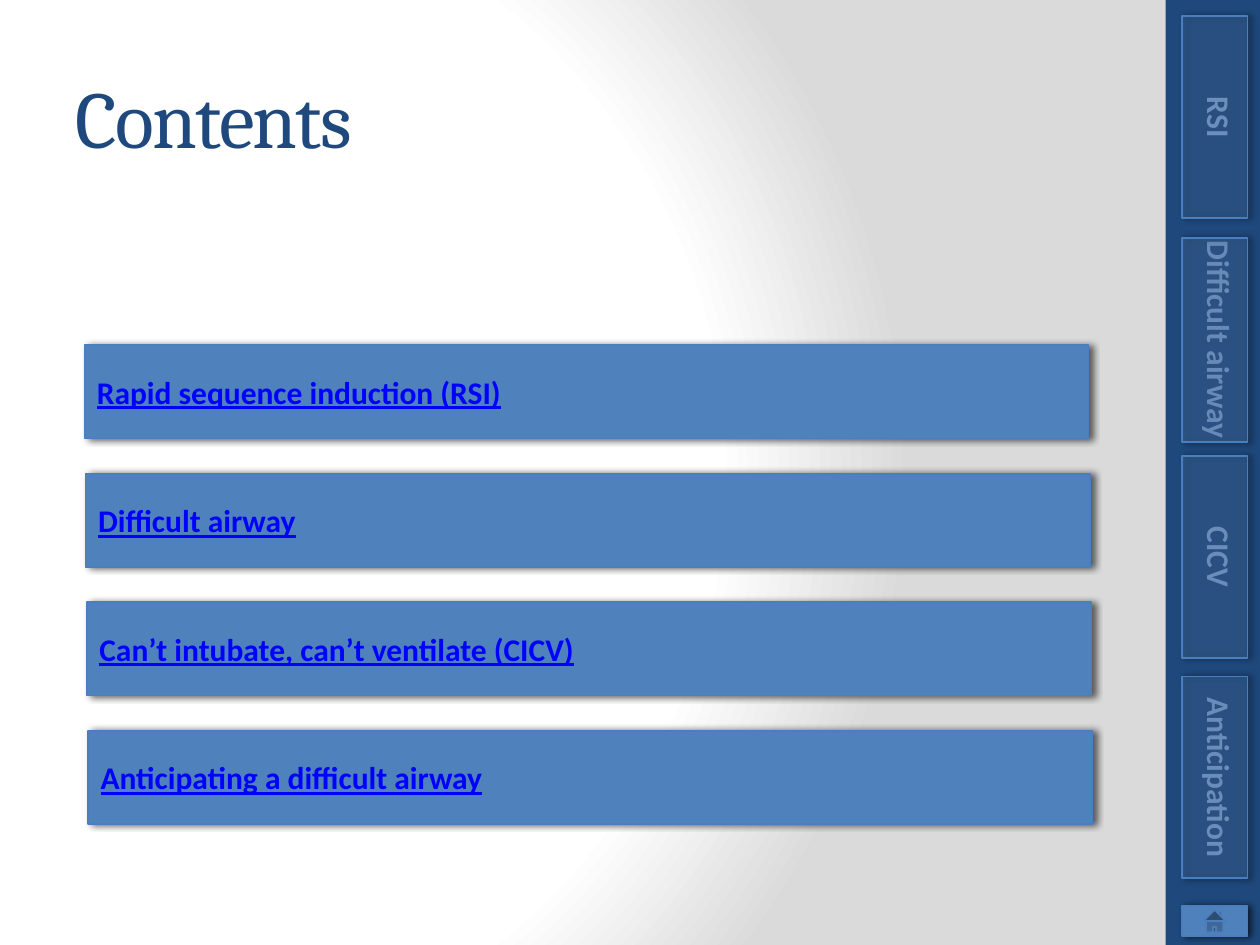
from pptx import Presentation
from pptx.dml.color import RGBColor
from pptx.enum.shapes import MSO_SHAPE
from pptx.enum.text import MSO_ANCHOR, PP_ALIGN
from pptx.oxml import parse_xml
from pptx.oxml.ns import nsdecls, qn
from pptx.util import Inches, Pt

RECTANGLE = MSO_SHAPE.RECTANGLE
BLANK_BUTTON = MSO_SHAPE.ACTION_BUTTON_CUSTOM
HOME_BUTTON = MSO_SHAPE.ACTION_BUTTON_HOME
MIDDLE = MSO_ANCHOR.MIDDLE
TOP = MSO_ANCHOR.TOP
LEFT = PP_ALIGN.LEFT
CENTER = PP_ALIGN.CENTER

NAVY = "1F497D"
BLUE = "4F81BD"
BORDER = "4B7EBC"
LINK = "0000FF"
PALE = "8EB4E3"

ENTRIES = [
    ("Rapid sequence induction (RSI)", 3.51),
    ("Difficult airway", 1.84),
    ("Can’t intubate, can’t ventilate (CICV)", 4.07),
    ("Anticipating a difficult airway", 3.3),
]

TABS = [
    ("Difficult airway", 1.79, 1.81, 1.89, 1.62, 33),
    ("RSI", 0.13, 1.6, 0.13, 1.6, 28),
    ("Anticipation", 5.37, 1.6, 5.37, 1.6, 30),
    ("CICV", 3.6, 1.64, 3.62, 1.6, 30),
]

GRADIENT = f"""<a:gradFill rotWithShape="1" {nsdecls("a")}><a:gsLst>
<a:gs pos="0"><a:srgbClr val="FFFFFF"/></a:gs>
<a:gs pos="75000"><a:srgbClr val="FFFFFF"/></a:gs>
<a:gs pos="100000"><a:srgbClr val="DADADA"/></a:gs></a:gsLst>
<a:path path="circle"><a:fillToRect l="20000" t="50000" r="100000" b="50000"/></a:path>
</a:gradFill>"""

SHADOW = f"""<a:effectLst {nsdecls("a")}>
<a:outerShdw blurRad="{Pt(4)}" dist="{Pt(2)}" dir="0" rotWithShape="0">
<a:srgbClr val="000000"><a:alpha val="60000"/></a:srgbClr></a:outerShdw></a:effectLst>"""


def color(value):
    return RGBColor.from_string(value)


class ContentsSlide:
    """Holds the style and the current slide, and draws each kind of element."""

    heading_font = "Cambria"
    body_font = "Calibri"
    body_size = 18

    def __init__(self, presentation):
        self.slide = presentation.slides.add_slide(presentation.slide_layouts[6])

    def background(self):
        self.slide.background.fill.solid()
        properties = self.slide.element.find(".//" + qn("p:bgPr"))
        properties.replace(properties[0], parse_xml(GRADIENT))

    def panel(self, shapes, kind, left, top, width, height, fill):
        shape = shapes.add_shape(kind, Inches(left), Inches(top), Inches(width), Inches(height))
        shape.shadow.inherit = False
        shape.fill.solid()
        shape.fill.fore_color.rgb = color(fill)
        shape.line.fill.background()
        return shape

    def button(self, shapes, kind, left, top, width, height, opacity=100):
        shape = self.panel(shapes, kind, left, top, width, height, BLUE)
        shape.line.color.rgb = color(BORDER)
        shape.line.width = Pt(1)
        properties = shape.element.spPr
        properties.replace(properties.find(qn("a:effectLst")), parse_xml(SHADOW))
        if opacity < 100:
            fill_color = properties.find(qn("a:solidFill"))[0]
            fill_color.append(parse_xml(f'<a:alpha {nsdecls("a")} val="{opacity * 1000}"/>'))

    def text(self, shapes, words, left, top, width, height, ink, align=LEFT, anchor=TOP, wrap=True):
        box = shapes.add_textbox(Inches(left), Inches(top), Inches(width), Inches(height))
        frame = box.text_frame
        frame.word_wrap = wrap
        frame.vertical_anchor = anchor
        paragraph = frame.paragraphs[0]
        paragraph.alignment = align
        run = paragraph.add_run()
        run.text = words
        run.font.name = self.body_font
        run.font.size = Pt(self.body_size)
        run.font.bold = True
        run.font.color.rgb = color(ink)
        return box, run

    def title(self, words):
        _, run = self.text(self.slide.shapes, words, 0.5, 0.3, 8.33, 1.25, NAVY, anchor=MIDDLE)
        run.font.name = self.heading_font
        run.font.size = Pt(46)
        run.font.bold = False
        run.font._element.set("spc", "-100")

    def entry(self, words, text_width, left, top):
        shapes = self.slide.shapes
        self.button(shapes, BLANK_BUTTON, left, top, 7.97, 0.74)
        _, run = self.text(shapes, words, left, top + 0.17, text_width, 0.4, LINK, wrap=False)
        run.font.underline = True

    def tab(self, words, text_top, text_height, top, height, opacity):
        shapes = self.slide.shapes.add_group_shape().shapes
        box, _ = self.text(shapes, words, 9.38, text_top, 0.5, text_height, PALE, CENTER)
        box.text_frame._txBody.bodyPr.set("vert", "vert")
        self.button(shapes, BLANK_BUTTON, 9.38, top, 0.52, height, opacity)


def main():
    presentation = Presentation()
    presentation.slide_width = Inches(10)
    presentation.slide_height = Inches(7.5)

    contents = ContentsSlide(presentation)
    shapes = contents.slide.shapes
    contents.background()
    contents.panel(shapes, RECTANGLE, 9.25, 0, 0.75, 7.5, NAVY)
    contents.title("Contents")
    for index, (words, text_width) in enumerate(ENTRIES):
        contents.entry(words, text_width, 0.67 + 0.01 * index, 2.74 + 1.02 * index)
    for tab in TABS:
        contents.tab(*tab)
    contents.button(shapes, HOME_BUTTON, 9.38, 7.19, 0.52, 0.24)

    presentation.save("out.pptx")


if __name__ == "__main__":
    main()
